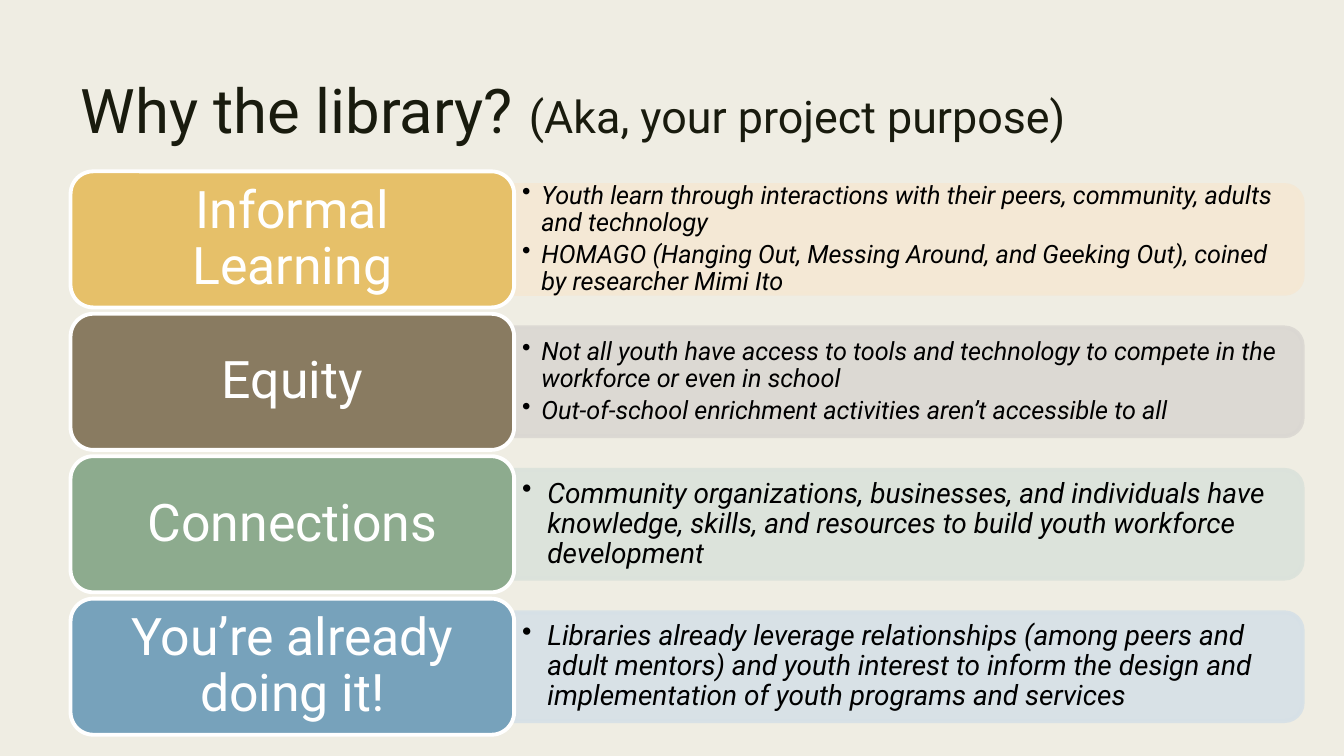
import pptx
import pptx.util
import pptx.dml.color
import pptx.enum.shapes
import pptx.enum.text
import pptx.oxml
import pptx.oxml.ns

Inches, Pt = pptx.util.Inches, pptx.util.Pt
RGBColor = pptx.dml.color.RGBColor
MSO_SHAPE = pptx.enum.shapes.MSO_SHAPE
ANCHOR = pptx.enum.text.MSO_ANCHOR
ALIGN = pptx.enum.text.PP_ALIGN
qn = pptx.oxml.ns.qn

FONT = "Roboto"
CREAM = RGBColor(0xEF, 0xED, 0xE3)
INK = RGBColor(0x19, 0x1B, 0x0E)
BLACK = RGBColor(0, 0, 0)
WHITE = RGBColor(0xFF, 0xFF, 0xFF)
GOLD, PALE_GOLD = RGBColor(0xE6, 0xC0, 0x69), RGBColor(0xF5, 0xE8, 0xD4)
BROWN, PALE_BROWN = RGBColor(0x89, 0x7B, 0x61), RGBColor(0xDA, 0xD7, 0xD2)
GREEN, PALE_GREEN = RGBColor(0x8D, 0xAB, 0x8E), RGBColor(0xDB, 0xE2, 0xDB)
BLUE, PALE_BLUE = RGBColor(0x77, 0xA2, 0xBB), RGBColor(0xD6, 0xE0, 0xE7)

TITLE = [("Why the library? ", 44), ("(Aka, your project purpose)", 32)]
# heading, tile colour, panel colour, text size, bullet indent, points
REASONS = [
    ("Informal Learning", GOLD, PALE_GOLD, 18, 0.19, [
        "Youth learn through interactions with their peers, community, adults and technology",
        "HOMAGO (Hanging Out, Messing Around, and Geeking Out), coined by researcher Mimi Ito",
    ]),
    ("Equity", BROWN, PALE_BROWN, 18, 0.19, [
        "Not all youth have access to tools and technology to compete in the workforce "
        "or even in school",
        "Out-of-school enrichment activities aren’t accessible to all",
    ]),
    ("Connections", GREEN, PALE_GREEN, 20, 0.25, [
        "Community organizations, businesses, and individuals have knowledge, skills, "
        "and resources to build youth workforce development",
    ]),
    ("You’re already doing it!", BLUE, PALE_BLUE, 20, 0.25, [
        "Libraries already leverage relationships (among peers and adult mentors) and youth "
        "interest to inform the design and implementation of youth programs and services",
    ]),
]

LEFT, TOP, PITCH = 0.7, 1.7, 1.413
TILE_W, TILE_H = 4.4, 1.35
PANEL_W, PANEL_H = 7.82, 1.08
POINTS_W, POINTS_H = 7.76, 0.97


def add_run(paragraph, text, size, color, italic=False):
    run = paragraph.add_run()
    run.text = text
    style = {"name": FONT, "size": Pt(size), "italic": italic}
    for key, value in style.items():
        setattr(run.font, key, value)
    run.font.color.rgb = color


def format_frame(frame, side, end):
    layout = {
        "word_wrap": True, "vertical_anchor": ANCHOR.MIDDLE,
        "margin_left": Inches(side), "margin_right": Inches(side),
        "margin_top": Inches(end), "margin_bottom": Inches(end),
    }
    for key, value in layout.items():
        setattr(frame, key, value)


def add_block(slide, kind, box, fill, line):
    block = slide.shapes.add_shape(kind, *map(Inches, box))
    block.shadow.inherit = False
    block.fill.solid()
    block.fill.fore_color.rgb = fill
    block.line.color.rgb = line
    block.line.width = Pt(2.75)
    return block


def add_panel(slide, middle, color):
    """Add the pale panel, turned so that its rounded end points right."""
    center = LEFT + TILE_W + PANEL_W / 2
    box = (center - PANEL_H / 2, middle - PANEL_W / 2, PANEL_H, PANEL_W)
    panel = add_block(slide, MSO_SHAPE.ROUND_2_SAME_RECTANGLE, box, color, color)
    panel.rotation = 90
    for tint in panel.element.spPr.iter(qn("a:srgbClr")):
        pptx.oxml.ns  # namespace helpers
        alpha = tint.makeelement(qn("a:alpha"), {"val": "90000"})
        tint.append(alpha)


def add_points(slide, middle, points, size, indent):
    box = (LEFT + TILE_W, middle - POINTS_H / 2, POINTS_W, POINTS_H)
    frame = slide.shapes.add_textbox(*map(Inches, box)).text_frame
    format_frame(frame, 0.08, 0.04)
    for index, point in enumerate(points):
        paragraph = frame.add_paragraph() if index else frame.paragraphs[0]
        paragraph.line_spacing = 0.9
        paragraph.space_after = Pt(size * 0.17)
        props = paragraph._p.get_or_add_pPr()
        props.set("marL", str(Inches(indent)))
        props.set("indent", str(-Inches(indent)))
        props.append(props.makeelement(qn("a:buChar"), {"char": "•"}))
        add_run(paragraph, point, size, BLACK, italic=True)


def add_tile(slide, top, heading, color):
    tile = add_block(slide, MSO_SHAPE.ROUNDED_RECTANGLE,
                     (LEFT, top, TILE_W, TILE_H), color, WHITE)
    format_frame(tile.text_frame, 0.15, 0.08)
    paragraph = tile.text_frame.paragraphs[0]
    paragraph.alignment = ALIGN.CENTER
    paragraph.line_spacing = 0.9
    add_run(paragraph, heading, 37, WHITE)


def add_title(slide):
    title = slide.shapes.title
    title.left, title.top, title.width, title.height = map(Inches, (LEFT, 0.75, 11.93, 1.62))
    title.text_frame.vertical_anchor = ANCHOR.TOP
    title.text_frame.auto_size = pptx.enum.text.MSO_AUTO_SIZE.NONE
    paragraph = title.text_frame.paragraphs[0]
    paragraph.alignment = ALIGN.LEFT
    paragraph.line_spacing = 0.89
    for text, size in TITLE:
        add_run(paragraph, text, size, INK)


def main():
    deck = pptx.Presentation()
    deck.slide_width, deck.slide_height = Inches(13.33), Inches(7.5)
    slide = deck.slides.add_slide(deck.slide_layouts[5])
    slide.background.fill.solid()
    slide.background.fill.fore_color.rgb = CREAM
    add_title(slide)
    for row, (heading, color, pale, size, indent, points) in enumerate(REASONS):
        top = TOP + row * PITCH
        middle = top + TILE_H / 2
        add_panel(slide, middle, pale)
        add_points(slide, middle, points, size, indent)
        add_tile(slide, top, heading, color)
    deck.save("out.pptx")


if __name__ == "__main__":
    main()
